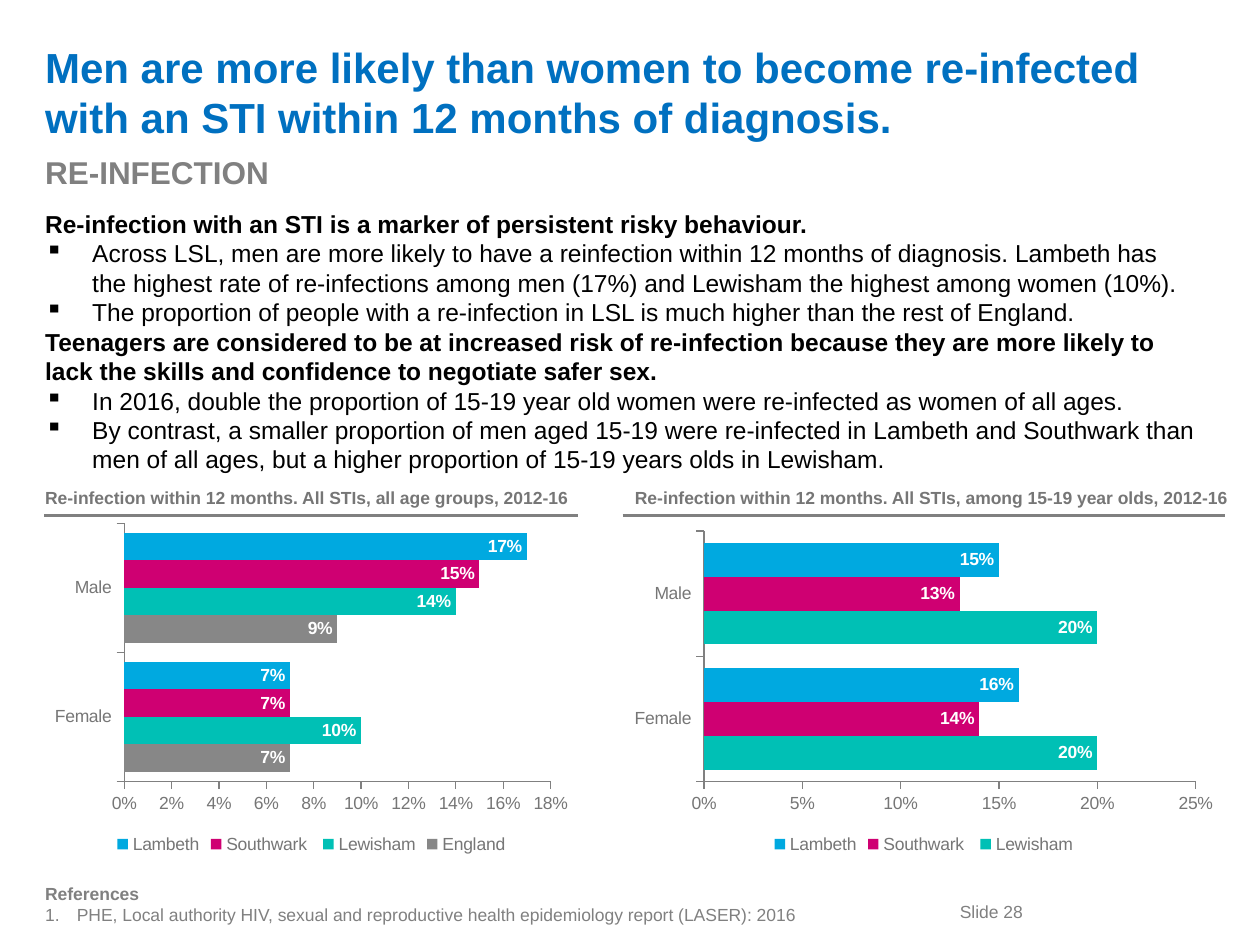
from lxml import etree
from pptx import Presentation
from pptx import util as u
from pptx.chart import data
from pptx.dml.color import RGBColor
from pptx.enum import chart as ch, shapes, text
from pptx.oxml.ns import qn

FONT = "Arial"
BLUE, GREY, CAPTION, BLACK, WHITE = "0070C0", "808080", "767676", "000000", "FFFFFF"
COLORS = {"England": "878787", "Lewisham": "00C0B5", "Southwark ": "CF0072", "Lambeth": "00A9E0"}


def rgb(value):
    return RGBColor.from_string(value)


def style(font, size, color, bold=False):
    font.name, font.size, font.bold = FONT, u.Pt(size), bold
    font.color.rgb = rgb(color)


def add_bullet(p, indent, tag, **attrs):
    pPr = p._p.get_or_add_pPr()
    pPr.set("marL", str(u.Cm(indent)))
    pPr.set("indent", str(-u.Cm(indent)))
    etree.SubElement(pPr, qn("a:" + tag), attrs)


def add_text(s, box, lines, size, color, indent=0, bullet=None, wrap=True,
             anchor=text.MSO_ANCHOR.TOP):
    """Lines are (text, is_heading); the others are bulleted."""
    tf = s.shapes.add_textbox(*map(u.Cm, box)).text_frame
    tf.word_wrap, tf.vertical_anchor = wrap, anchor
    for i, (line, heading) in enumerate(lines):
        p = tf.paragraphs[0] if i == 0 else tf.add_paragraph()
        p.text = line
        if bullet and not heading:
            add_bullet(p, indent, **bullet)
        style(p.runs[0].font, size, color, heading)


def add_header(s, x, y, w):
    title = "Men are more likely than women to become re-infected with an STI within 12 months of diagnosis."
    add_text(s, (x, y, w, 2.64), [(title, True)], 24, BLUE, anchor=text.MSO_ANCHOR.MIDDLE)
    add_text(s, (x, y + 2.44, 12.24, 1.02), [("RE-INFECTION", True)], 18, GREY)


def add_body(s, box):
    lines = [
        ("Re-infection with an STI is a marker of persistent risky behaviour.", True),
        ("Across LSL, men are more likely to have a reinfection within 12 months of diagnosis. "
         "Lambeth has the highest rate of re-infections among men (17%) and Lewisham the highest "
         "among women (10%).", False),
        ("The proportion of people with a re-infection in LSL is much higher than the rest of "
         "England.", False),
        ("Teenagers are considered to be at increased risk of re-infection because they are more "
         "likely to lack the skills and confidence to negotiate safer sex.", True),
        ("In 2016, double the proportion of 15-19 year old women were re-infected as women of "
         "all ages.", False),
        ("By contrast, a smaller proportion of men aged 15-19 were re-infected in Lambeth and "
         "Southwark than men of all ages, but a higher proportion of 15-19 years olds in "
         "Lewisham.", False),
    ]
    add_text(s, box, lines, 14, BLACK, 0.95, {"tag": "buChar", "char": "▪"})


def add_bars(s, box, values, top, step):
    cd = data.CategoryChartData(number_format="0%")
    cd.categories = ["Female", "Male"]
    for name, vals in values.items():
        cd.add_series(name, vals)
    chart = s.shapes.add_chart(ch.XL_CHART_TYPE.BAR_CLUSTERED, *map(u.Cm, box), cd).chart
    style(chart.font, 10, CAPTION)
    chart.has_title = False
    chart.has_legend = True
    chart.legend.position = ch.XL_LEGEND_POSITION.BOTTOM
    chart.legend.include_in_layout = False

    # Axes
    for axis in (chart.category_axis, chart.value_axis):
        axis.has_major_gridlines = False
        axis.major_tick_mark = ch.XL_TICK_MARK.OUTSIDE
        axis.format.line.color.rgb = rgb(GREY)
    axis = chart.value_axis
    axis.minimum_scale, axis.maximum_scale, axis.major_unit = 0, top, step
    axis.tick_labels.number_format = "0%"
    axis.tick_labels.number_format_is_linked = False

    # Bars and their labels
    plot = chart.plots[0]
    plot.gap_width, plot.overlap, plot.vary_by_categories = 70, 0, False
    for series in plot.series:
        series.format.fill.solid()
        series.format.fill.fore_color.rgb = rgb(COLORS[series.name])
        labels = series.data_labels
        labels.show_value = True
        labels.position = ch.XL_LABEL_POSITION.INSIDE_END
        labels.number_format, labels.number_format_is_linked = "0%", False
        style(labels.font, 10, WHITE, True)


def add_panel(s, box, caption, caption_dx, gap, values, top, step):
    """Caption, rule and bar chart; the chart starts a gap below the rule."""
    x, y, w, h = box
    rule_y = y + 0.69
    add_text(s, (x + caption_dx, y, 12.8, 0.69), [(caption, True)], 10, CAPTION)
    rule = s.shapes.add_connector(shapes.MSO_CONNECTOR.STRAIGHT,
                                  *map(u.Cm, (x, rule_y, x + w, rule_y)))
    rule.line.color.rgb, rule.line.width = rgb(GREY), u.Pt(1.5)
    etree.SubElement(rule._element.spPr, qn("a:effectLst"))
    chart_y = rule_y + gap
    add_bars(s, (x, chart_y, w, y + h - chart_y), values, top, step)


def add_footer(s, x, y):
    lines = [("References", True),
             ("PHE, Local authority HIV, sexual and reproductive health epidemiology report "
              "(LASER): 2016", False)]
    add_text(s, (x, y, 18.29, 1.12), lines, 10, GREY, 0.64,
             {"tag": "buAutoNum", "type": "arabicPeriod"})
    add_text(s, (x + 18.44, y + 0.35, 1.83, 0.69), [("Slide 28", False)], 10, GREY, wrap=False)


def main():
    prs = Presentation()
    prs.slide_width, prs.slide_height = u.Cm(25.4), u.Cm(19.05)
    s = prs.slides.add_slide(prs.slide_layouts[6])

    left = 0.66
    add_header(s, left, 0.53, 23.7)
    add_body(s, (left, 4.09, 23.7, 12.52))
    add_panel(s, (0.89, 9.7, 10.77, 7.62),
              "Re-infection within 12 months. All STIs, all age groups, 2012-16", -0.23, 0.02,
              {"England": (0.07, 0.09), "Lewisham": (0.10, 0.14),
               "Southwark ": (0.07, 0.15), "Lambeth": (0.07, 0.17)}, 0.18, 0.02)
    add_panel(s, (12.55, 9.7, 12.14, 7.62),
              "Re-infection within 12 months. All STIs, among 15-19 year olds, 2012-16", 0, 0.18,
              {"Lewisham": (0.20, 0.20), "Southwark ": (0.14, 0.13),
               "Lambeth": (0.16, 0.15)}, 0.25, 0.05)
    add_footer(s, left, 17.68)
    prs.save("out.pptx")


if __name__ == "__main__":
    main()
